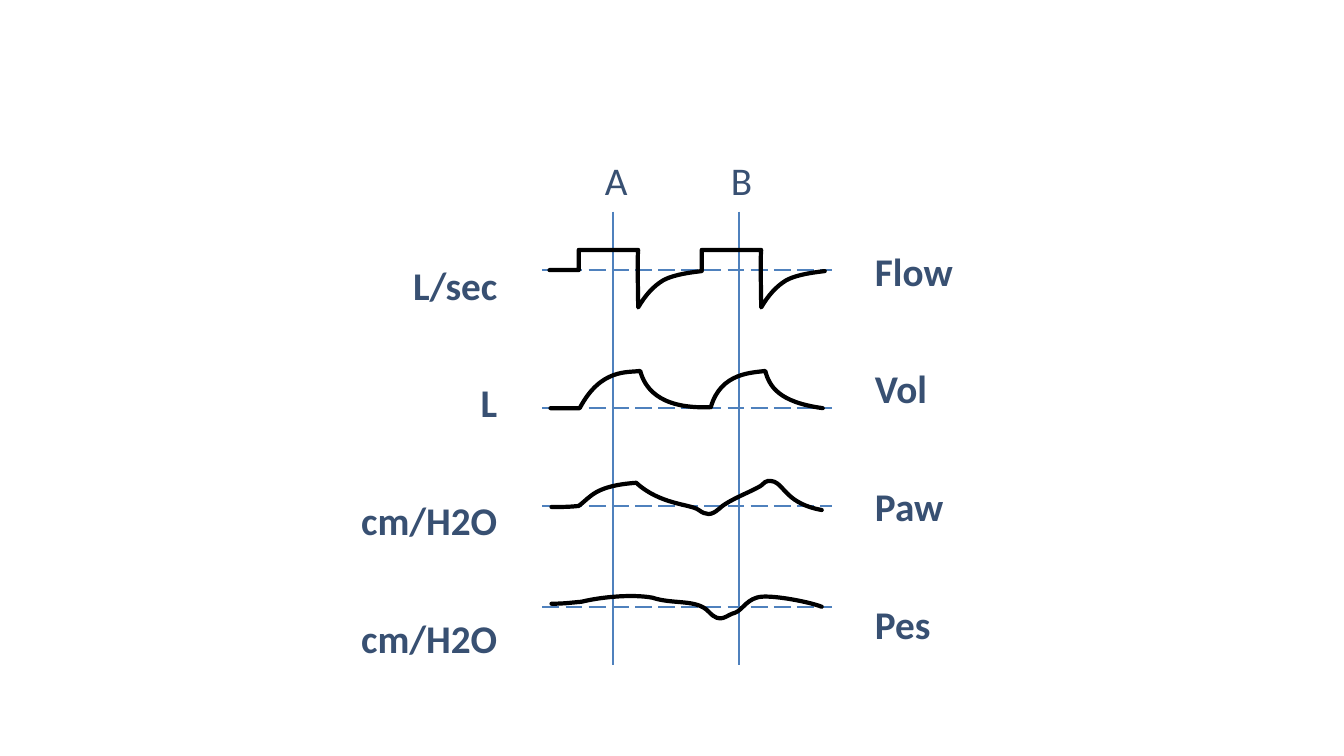
"""Build a slide of flow, volume, airway and oesophageal pressure traces for two breaths."""
import dataclasses
import typing

import lxml.etree
import pptx
import pptx.dml.color
import pptx.enum.dml
import pptx.enum.shapes
import pptx.enum.text
import pptx.oxml.ns
import pptx.util

EMU_PER_PX = 9144
CURVE_STEPS = 16
GUIDE_COLOUR = "4F81BD"
TRACE_COLOUR = "000000"
TEXT_COLOUR = "385072"
LEFT = pptx.enum.text.PP_ALIGN.LEFT
CENTRE = pptx.enum.text.PP_ALIGN.CENTER
RIGHT = pptx.enum.text.PP_ALIGN.RIGHT

Point = tuple[float, float]
Segment = tuple[Point, ...]


@dataclasses.dataclass(frozen=True)
class Guide:
    start: tuple[int, int]
    end: tuple[int, int]
    dashed: bool = False


@dataclasses.dataclass(frozen=True)
class Trace:
    start: Point
    segments: tuple[Segment, ...]


@dataclasses.dataclass(frozen=True)
class Label:
    box: tuple[int, int, int, int]
    lines: tuple[str, ...]
    alignment: pptx.enum.text.PP_ALIGN
    line_spacing: float | None = None
    bold: bool = False
    wrap: bool = True


def flow_breath(x: int) -> tuple[Segment, ...]:
    return (
        ((x, 263), (x, 253), (x, 248)),
        ((x + 59, 248),),
        ((x + 58, 254), (x + 59, 299), (x + 59, 305)),
        ((x + 66, 293), (x + 74, 284), (x + 84, 278)),
        ((x + 95, 272), (x + 114, 270), (x + 122, 269)),
    )


GUIDES = [Guide((x, 210), (x, 660)) for x in (608, 733)] + [
    Guide((538, y), (825, y), dashed=True) for y in (268, 405, 502, 602)
]

TRACES = [
    Trace((545, 268), (((574, 268),), *flow_breath(574))),
    Trace((696, 268), flow_breath(696)),
    Trace((816, 405), (
        ((772, 399), (763, 383), (759, 368)),
        ((747, 370), (715, 369), (705, 404)),
    )),
    Trace((704, 404), (
        ((652, 406), (639, 383), (635, 368)),
        ((623, 370), (596, 365), (575, 405)),
        ((564, 405), (560, 405), (546, 405)),
    )),
    Trace((547, 503), (
        ((559, 503), (564, 503), (574, 502)),
        ((586, 493), (590, 482), (631, 479)),
        ((655, 501), (685, 500), (693, 506)),
        ((700, 511), (705, 512), (713, 505)),
        ((721, 497), (742, 489), (751, 484)),
        ((760, 480), (757, 475), (768, 478)),
        ((778, 482), (781, 500), (815, 506)),
    )),
    Trace((547, 599), (
        ((559, 599), (566, 598), (577, 597)),
        ((593, 593), (625, 589), (647, 593)),
        ((668, 600), (691, 594), (703, 607)),
        ((715, 620), (720, 610), (729, 608)),
        ((737, 605), (741, 593), (756, 592)),
        ((770, 591), (802, 597), (815, 602)),
    )),
]

LABELS = [
    Label((303, 184, 200, 462), ("L/sec", "L", "cm/H2O", "cm/H2O"), RIGHT, 2.5, True),
    Label((858, 170, 200, 462), ("Flow", "Vol", "Paw", "Pes"), LEFT, 2.5, True),
    Label((590, 150, 38, 57), ("A",), CENTRE, wrap=False),
    Label((715, 150, 38, 57), ("B",), CENTRE, wrap=False),
]


def px(length: float) -> pptx.util.Emu:
    return pptx.util.Emu(round(length * EMU_PER_PX))


def colour(value: str) -> pptx.dml.color.RGBColor:
    return pptx.dml.color.RGBColor.from_string(value)


def flatten(trace: Trace) -> list[Point]:
    points = []
    current = trace.start
    for segment in trace.segments:
        if len(segment) == 1:
            points.append(segment[0])
        else:
            corners = (current, *segment)
            for step in range(1, CURVE_STEPS + 1):
                t = step / CURVE_STEPS
                weights = ((1 - t) ** 3, 3 * t * (1 - t) ** 2, 3 * t * t * (1 - t), t ** 3)
                x, y = (sum(w * c[axis] for w, c in zip(weights, corners)) for axis in (0, 1))
                points.append((x, y))
        current = segment[-1]
    return points


def add_guide(shapes: typing.Any, guide: Guide) -> None:
    connector = shapes.add_connector(
        pptx.enum.shapes.MSO_CONNECTOR.STRAIGHT, *map(px, guide.start + guide.end)
    )
    connector.line.color.rgb = colour(GUIDE_COLOUR)
    connector.line.width = pptx.util.Pt(1.5)
    if guide.dashed:
        connector.line.dash_style = pptx.enum.dml.MSO_LINE.LONG_DASH
    properties = connector._element.spPr
    lxml.etree.SubElement(properties, pptx.oxml.ns.qn("a:effectLst"))


def set_segments(shape: typing.Any, segments: tuple[Segment, ...]) -> None:
    qn = pptx.oxml.ns.qn
    outline = next(shape._element.iter(qn("a:path")))
    for step in list(outline)[1:]:
        outline.remove(step)
    for segment in segments:
        tag = "a:lnTo" if len(segment) == 1 else "a:cubicBezTo"
        step = lxml.etree.SubElement(outline, qn(tag))
        for x, y in segment:
            point = lxml.etree.SubElement(step, qn("a:pt"))
            point.set("x", str(px(x) - shape.left))
            point.set("y", str(px(y) - shape.top))


def add_trace(shapes: typing.Any, trace: Trace) -> None:
    builder = shapes.build_freeform(*map(px, trace.start), scale=1.0)
    builder.add_line_segments([(px(x), px(y)) for x, y in flatten(trace)], close=False)
    shape = builder.convert_to_shape()
    set_segments(shape, trace.segments)
    shape.shadow.inherit = False
    shape.fill.background()
    shape.line.color.rgb = colour(TRACE_COLOUR)
    shape.line.width = pptx.util.Pt(3)
    line = shape.line._get_or_add_ln()
    line.set("cap", "rnd")
    lxml.etree.SubElement(line, pptx.oxml.ns.qn("a:round"))


def add_label(shapes: typing.Any, label: Label) -> None:
    frame = shapes.add_textbox(*map(px, label.box)).text_frame
    frame.word_wrap = label.wrap
    frame.auto_size = pptx.enum.text.MSO_AUTO_SIZE.SHAPE_TO_FIT_TEXT
    for index, line in enumerate(label.lines):
        paragraph = frame.add_paragraph() if index else frame.paragraphs[0]
        paragraph.alignment = label.alignment
        paragraph.line_spacing = label.line_spacing
        run = paragraph.add_run()
        run.text = line
        run.font.name = "Calibri"
        run.font.size = pptx.util.Pt(28)
        run.font.bold = label.bold
        run.font.color.rgb = colour(TEXT_COLOUR)


def main() -> None:
    presentation = pptx.Presentation()
    presentation.slide_width = px(1333)
    presentation.slide_height = px(750)
    slide = presentation.slides.add_slide(presentation.slide_layouts[6])
    shapes = slide.shapes.add_group_shape().shapes
    for guide in GUIDES:
        add_guide(shapes, guide)
    for trace in TRACES:
        add_trace(shapes, trace)
    for label in LABELS:
        add_label(shapes, label)
    presentation.save("out.pptx")


if __name__ == "__main__":
    main()
